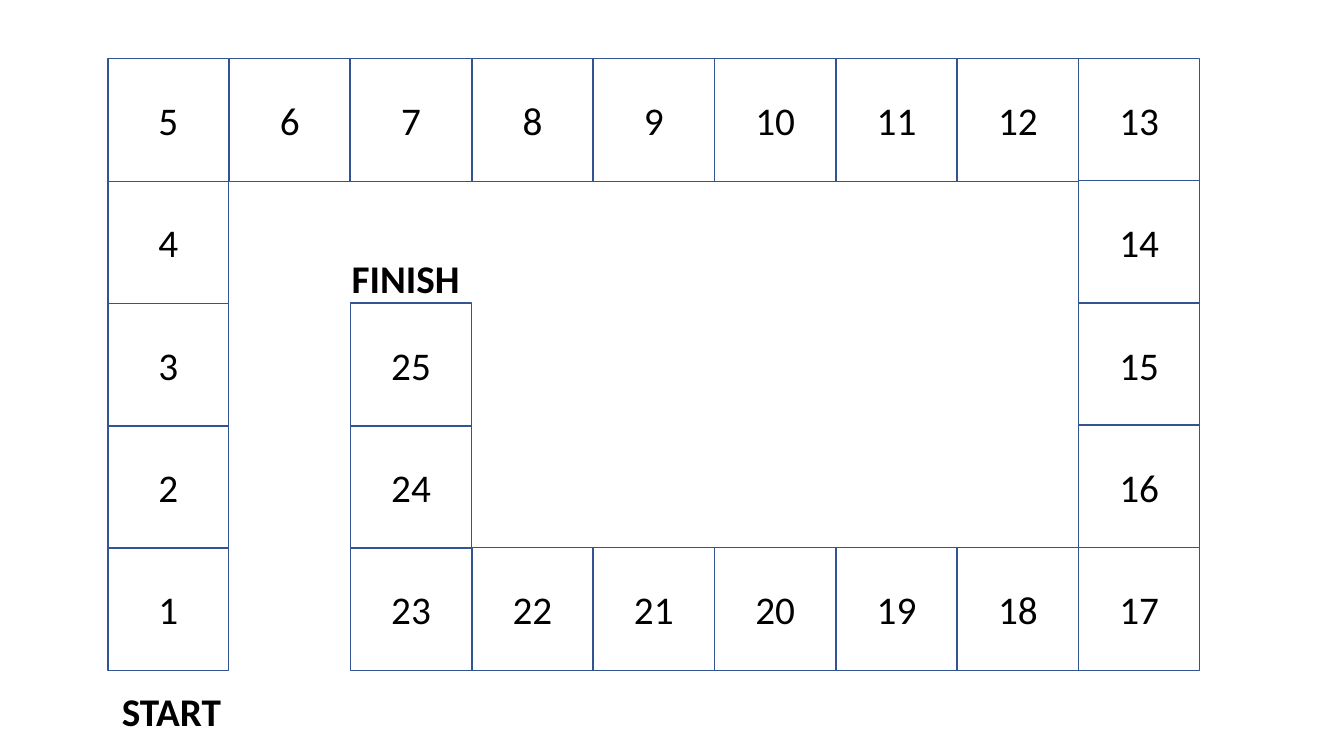
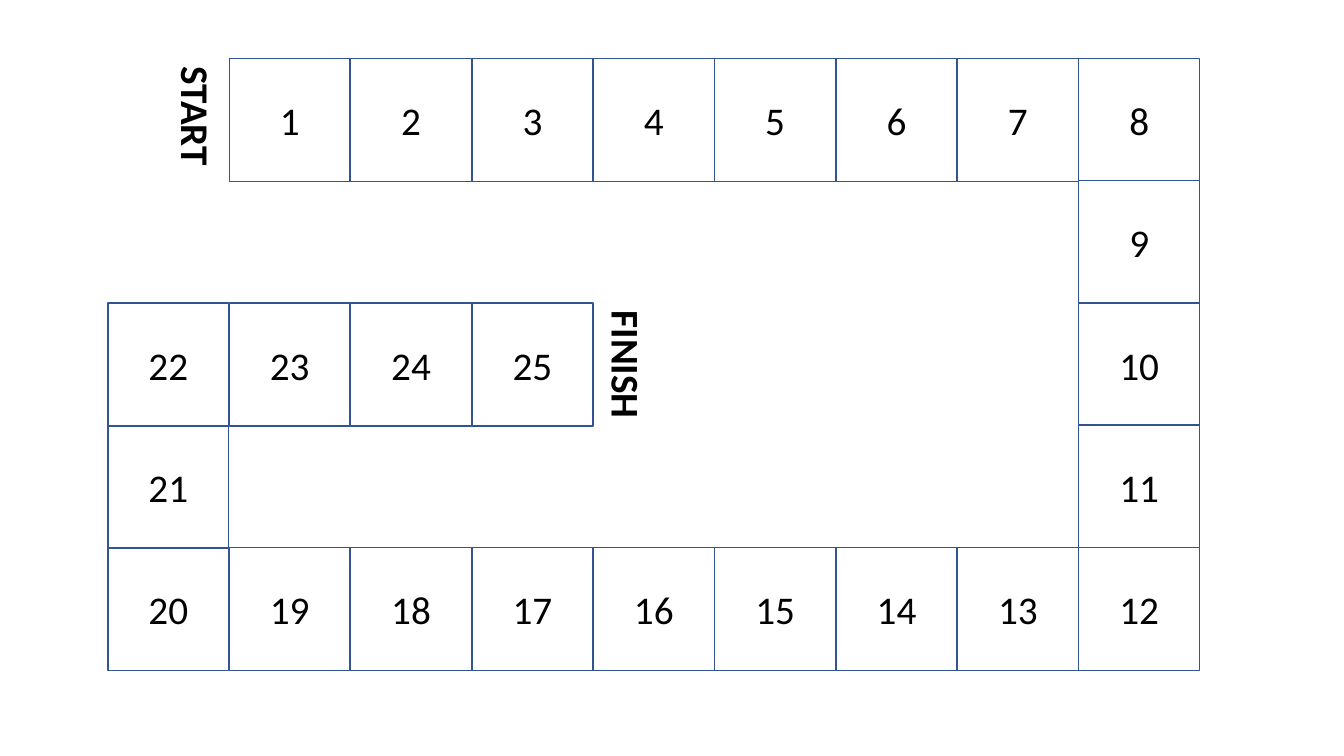
from collections.abc import Iterator
from dataclasses import dataclass

from pptx import Presentation
from pptx.dml.color import RGBColor
from pptx.enum import shapes, text
from pptx.slide import Slide
from pptx.text.text import TextFrame
from pptx.util import Inches, Pt

WHITE = RGBColor(0xFF, 0xFF, 0xFF)
BLACK = RGBColor(0x00, 0x00, 0x00)
BLUE = RGBColor(0x32, 0x54, 0x91)
FONT = "Calibri"
FONT_SIZE = Pt(28)

COLUMNS, ROWS = 9, 5
GRID_LEFT, GRID_TOP = 1.07, 0.58
COLUMN_PITCH = (10.7 - GRID_LEFT) / (COLUMNS - 1)
ROW_PITCH = (5.43 - GRID_TOP) / (ROWS - 1)
CELL_WIDTH, CELL_HEIGHT = 1.2, 1.22

UP, DOWN, LEFT, RIGHT = (0, -1), (0, 1), (-1, 0), (1, 0)


@dataclass(frozen=True)
class Leg:
    direction: tuple[int, int]
    steps: int


@dataclass(frozen=True)
class Label:
    wording: str
    left: float
    top: float
    width: float
    wrap: bool
    rotation: int = 0


@dataclass(frozen=True)
class Board:
    start: tuple[int, int]
    legs: tuple[Leg, ...]
    labels: tuple[Label, ...]


BOARDS = (
    Board(
        start=(0, 4),
        legs=(Leg(UP, 4), Leg(RIGHT, 8), Leg(DOWN, 4), Leg(LEFT, 6), Leg(UP, 2)),
        labels=(
            Label("START", 1.11, 6.77, 1.2, wrap=False),
            Label("FINISH", 3.39, 2.47, 1.46, wrap=True),
        ),
    ),
    Board(
        start=(1, 0),
        legs=(Leg(RIGHT, 7), Leg(DOWN, 4), Leg(LEFT, 8), Leg(UP, 2), Leg(RIGHT, 3)),
        labels=(
            Label("START", 1.35, 0.88, 1.2, wrap=False, rotation=90),
            Label("FINISH", 5.49, 3.43, 1.46, wrap=True, rotation=90),
        ),
    ),
)


def walk(board: Board) -> Iterator[tuple[int, int]]:
    """Yield the column and row of each square, from start to finish."""
    column, row = board.start
    yield column, row
    for leg in board.legs:
        for _ in range(leg.steps):
            column += leg.direction[0]
            row += leg.direction[1]
            yield column, row


def write(frame: TextFrame, wording: str, bold: bool = False) -> None:
    run = frame.paragraphs[0].add_run()
    run.text = wording
    run.font.name = FONT
    run.font.size = FONT_SIZE
    run.font.bold = bold
    run.font.color.rgb = BLACK


def add_square(slide: Slide, number: int, column: int, row: int) -> None:
    square = slide.shapes.add_shape(
        shapes.MSO_SHAPE.RECTANGLE,
        Inches(GRID_LEFT + column * COLUMN_PITCH),
        Inches(GRID_TOP + row * ROW_PITCH),
        Inches(CELL_WIDTH),
        Inches(CELL_HEIGHT),
    )
    square.shadow.inherit = False
    square.fill.solid()
    square.fill.fore_color.rgb = WHITE
    square.line.color.rgb = BLUE
    square.line.width = Pt(1)
    frame = square.text_frame
    frame.vertical_anchor = text.MSO_ANCHOR.MIDDLE
    frame.paragraphs[0].alignment = text.PP_ALIGN.CENTER
    write(frame, str(number))


def add_label(slide: Slide, label: Label) -> None:
    box = slide.shapes.add_textbox(
        Inches(label.left), Inches(label.top), Inches(label.width), Inches(0.57)
    )
    box.rotation = label.rotation
    frame = box.text_frame
    frame.word_wrap = label.wrap
    frame.auto_size = text.MSO_AUTO_SIZE.SHAPE_TO_FIT_TEXT
    write(frame, label.wording, bold=True)


def main() -> None:
    presentation = Presentation()
    presentation.slide_width = Inches(13.33)
    presentation.slide_height = Inches(7.5)
    blank = presentation.slide_layouts[6]
    for board in BOARDS:
        slide = presentation.slides.add_slide(blank)
        for number, (column, row) in enumerate(walk(board), start=1):
            add_square(slide, number, column, row)
        for label in board.labels:
            add_label(slide, label)
    presentation.save("out.pptx")


if __name__ == "__main__":
    main()
